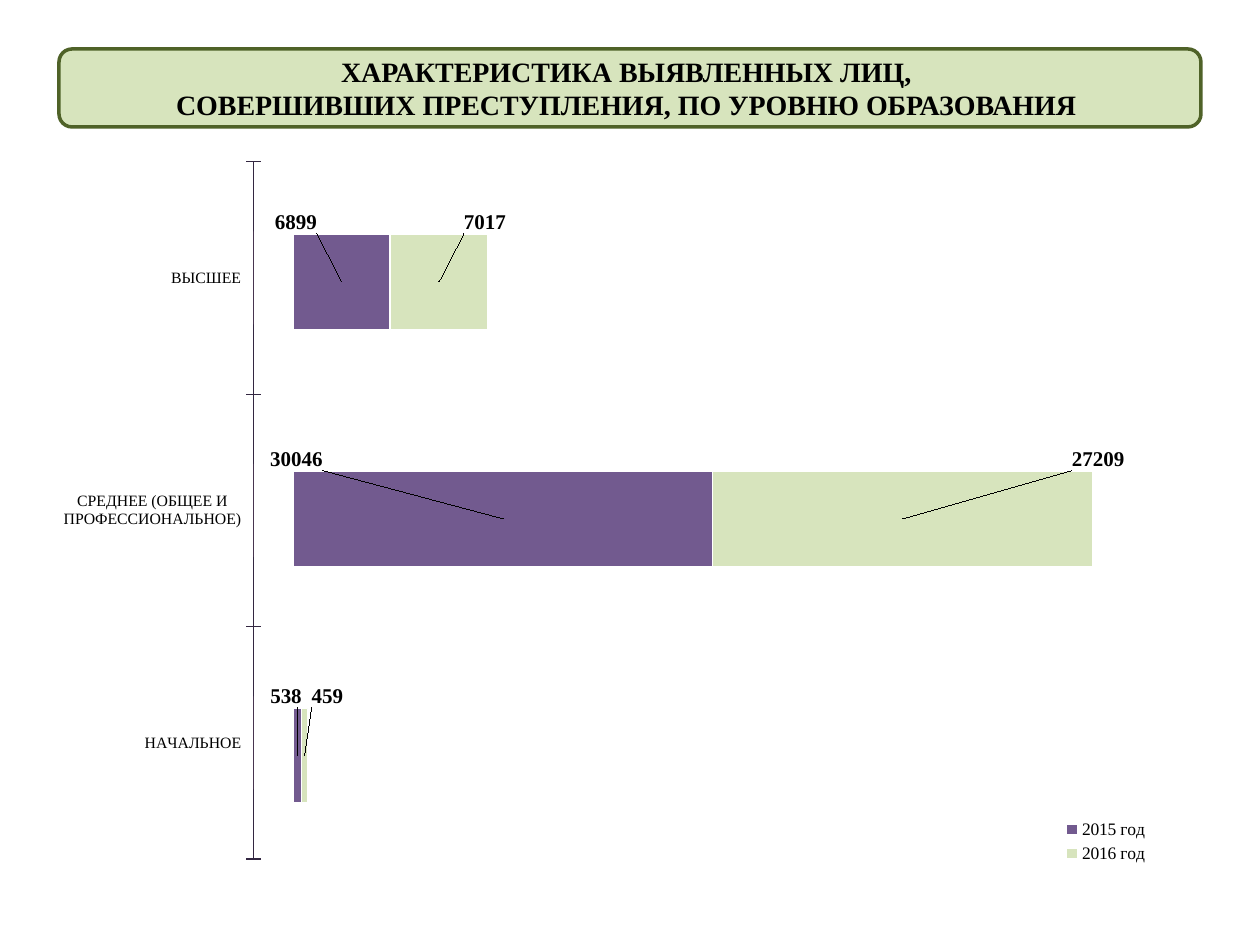
from pptx import Presentation
from pptx.chart.data import CategoryChartData
from pptx.dml.color import RGBColor
from pptx.enum.chart import XL_CHART_TYPE as ChartType, XL_LEGEND_POSITION as LegendPosition
from pptx.enum.chart import XL_TICK_MARK as TickMark
from pptx.enum.shapes import MSO_SHAPE as Shape
from pptx.enum.text import MSO_ANCHOR as Anchor, PP_ALIGN as Align
from pptx.oxml import parse_xml
from pptx.oxml.ns import nsdecls, qn
from pptx.util import Emu, Pt

COLORS = {
    "text": "000000",
    "purple": "725A8F",
    "green": "D7E4BD",
    "border": "4F6228",
    "axis": "332741",
    "white": "FFFFFF",
}
SERIF = "Times New Roman"

LEVELS = ["НАЧАЛЬНОЕ", "СРЕДНЕЕ (ОБЩЕЕ И ПРОФЕССИОНАЛЬНОЕ)", "ВЫСШЕЕ"]
YEARS = [
    # name, colour, values, label offsets from the bar centres
    ("2015 год", "purple", (538, 30046, 6899),
     ((-0.01, -0.08), (-0.18, -0.08), (-0.04, -0.08))),
    ("2016 год", "green", (459, 27209, 7017),
     ((0.02, -0.08), (0.17, -0.08), (0.04, -0.08))),
]
TITLE = ["ХАРАКТЕРИСТИКА ВЫЯВЛЕННЫХ ЛИЦ, ",
         "СОВЕРШИВШИХ ПРЕСТУПЛЕНИЯ, ПО УРОВНЮ ОБРАЗОВАНИЯ "]


def px(length):
    return Emu(round(length * 914400 / 126))


def color(name):
    return RGBColor.from_string(COLORS[name])


def manual_layout(modes="", **fractions):
    """Return a c:layout element placed by fractions of the chart."""
    values = "".join(f'<c:{key} val="{value}"/>' for key, value in fractions.items())
    return parse_xml(f'<c:layout {nsdecls("c")}><c:manualLayout>'
                     f'{modes}{values}</c:manualLayout></c:layout>')


def set_layout(parent, layout, index):
    for old in parent.findall(qn("c:layout")):
        parent.remove(old)
    parent.insert(index, layout)


class SlideBuilder:
    EDGE_MODES = '<c:xMode val="edge"/><c:yMode val="edge"/>'
    PLOT_MODES = '<c:layoutTarget val="inner"/>' + EDGE_MODES

    def __init__(self, slide):
        self.slide = slide

    def style_font(self, font, size, bold=False, name=SERIF):
        font.name, font.size, font.bold = name, Pt(size), bold
        font.color.rgb = color("text")

    def banner(self, box, lines):
        shape = self.slide.shapes.add_shape(Shape.ROUNDED_RECTANGLE, *map(px, box))
        shape.shadow.inherit = False
        shape.fill.solid()
        shape.fill.fore_color.rgb = color("green")
        shape.line.color.rgb = color("border")
        shape.line.width = Pt(2)
        frame = shape.text_frame
        frame.word_wrap = True
        frame.vertical_anchor = Anchor.MIDDLE
        for number, line in enumerate(lines):
            paragraph = frame.add_paragraph() if number else frame.paragraphs[0]
            paragraph.alignment = Align.CENTER
            run = paragraph.add_run()
            run.text = line
            self.style_font(run.font, 16, bold=True)

    def stacked_bars(self, box, categories, series, maximum, plot_area):
        data = CategoryChartData()
        data.categories = categories
        for name, values in series:
            data.add_series(name, values)
        frame = self.slide.shapes.add_chart(ChartType.BAR_STACKED, *map(px, box), data)
        chart = frame.chart
        chart.has_title = False
        chart.has_legend = False
        self.style_font(chart.font, 10, name="Calibri")
        plot = chart.plots[0]
        plot.gap_width, plot.overlap = 150, 100
        plot.vary_by_categories = False
        axis = chart.value_axis
        axis.minimum_scale, axis.maximum_scale = 0, maximum
        axis.has_major_gridlines = False
        axis.visible = False
        x, y, w, h = plot_area
        area = chart._chartSpace.chart.plotArea
        set_layout(area, manual_layout(self.PLOT_MODES, x=x, y=y, w=w, h=h), 0)
        return chart

    def level_axis(self, box):
        """Add the category axis as a chart whose bars are all zero."""
        zeros = [0] * len(LEVELS)
        chart = self.stacked_bars(box, LEVELS, [("Series 1", zeros), ("Series 2", zeros)],
                                  1, (0.271, 0.023, 0.091, 0.954))
        axis = chart.category_axis
        axis.major_tick_mark = TickMark.CROSS
        axis.minor_tick_mark = TickMark.NONE
        axis.format.line.color.rgb = color("axis")
        axis.format.line.width = Pt(0.75)
        self.style_font(axis.tick_labels.font, 9)

    def year_bars(self, box):
        chart = self.stacked_bars(box, ["1", "2", "3"],
                                  [(name, values) for name, _, values, _ in YEARS],
                                  70000, (0.139, 0.025, 0.849, 0.954))
        chart.category_axis.visible = False
        for series, (_, fill, _, offsets) in zip(chart.plots[0].series, YEARS):
            series.format.fill.solid()
            series.format.fill.fore_color.rgb = color(fill)
            series.format.line.color.rgb = color("white")
            series.format.line.width = Pt(0.75)
            series.data_labels.show_value = True
            self.style_font(series.data_labels.font, 12, bold=True)
            for index in range(len(offsets)):
                self.style_font(series.points[index].data_label.font, 12, bold=True)
            labels = series.data_labels._element.findall(qn("c:dLbl"))
            for label, (x, y) in zip(labels, offsets):
                set_layout(label, manual_layout(x=x, y=y), 1)
        chart.has_legend = True
        legend = chart.legend
        legend.position = LegendPosition.RIGHT
        legend.include_in_layout = False
        self.style_font(legend.font, 10)
        set_layout(legend._element,
                   manual_layout(self.EDGE_MODES, x=0.8, y=0.9, w=0.09, h=0.07), 1)


def main():
    presentation = Presentation()
    presentation.slide_width, presentation.slide_height = px(1260), px(945)
    builder = SlideBuilder(presentation.slides.add_slide(presentation.slide_layouts[6]))
    builder.level_axis((59, 145, 718, 731))
    builder.year_bars((134, 145, 1150, 745))
    builder.banner((59, 49, 1142, 78), TITLE)
    presentation.save("out.pptx")


if __name__ == "__main__":
    main()
